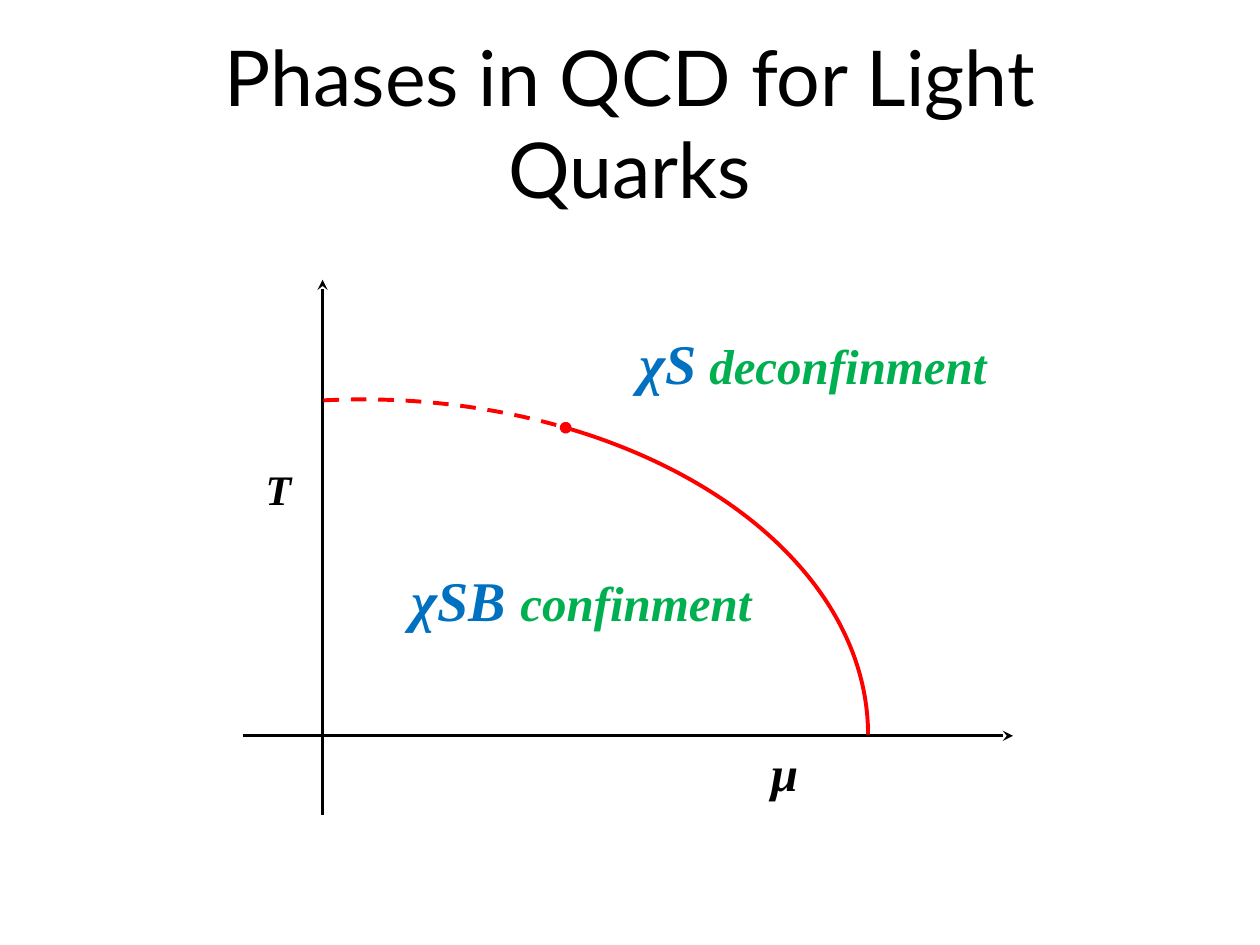
from lxml import etree
from pptx import Presentation
from pptx.dml.color import RGBColor
from pptx.enum.dml import MSO_LINE
from pptx.enum.shapes import MSO_CONNECTOR, MSO_SHAPE
from pptx.enum.text import MSO_ANCHOR, MSO_AUTO_SIZE, PP_ALIGN
from pptx.oxml.ns import qn
from pptx.util import Inches, Pt

BLACK = RGBColor(0x00, 0x00, 0x00)
BLUE = RGBColor(0x00, 0x70, 0xC0)
GREEN = RGBColor(0x00, 0xB0, 0x50)
RED = RGBColor(0xFF, 0x00, 0x00)
TITLE_FONT, LABEL_FONT = "Lato", "Times New Roman"
TITLE = "Phases in QCD for Light Quarks"

# Labels: box (left, top, width, height), runs (text, size, colour)
LABELS = [
    ((2.01, 3.63, 0.41, 0.5), [("T", 24, BLACK)]),
    ((6.02, 5.84, 0.42, 0.57), [("μ", 28, BLACK)]),
    ((3.17, 4.44, 2.93, 0.64), [("χSB ", 32, BLUE), ("confinment", 28, GREEN)]),
    ((4.98, 2.56, 2.98, 1.18),
     [("χS", 32, BLUE), (" ", 28, BLUE), ("deconfinment", 28, GREEN)]),
]

# Axes cross at the origin: (start, end)
ORIGIN_X, ORIGIN_Y = 2.56, 5.84
AXES = [
    ((1.93, ORIGIN_Y), (8.04, ORIGIN_Y)),
    ((ORIGIN_X, 6.47), (ORIGIN_X, 2.22)),
]

# Phase boundary: one ellipse, split at the critical point (angles in degrees)
ELLIPSE = (-1.14, 3.17, 8.03, 5.32)
CRITICAL = 303.55
ARCS = [
    (263.38, CRITICAL, MSO_LINE.DASH, None),
    (CRITICAL, 0, None, "oval"),
]
ADJ_PER_DEGREE = 0.6  # 60000 angle units per degree over 100000


def inches(values):
    return [Inches(v) for v in values]


def add_line_end(line, tag, kind):
    etree.SubElement(line._get_or_add_ln(), qn(tag), type=kind)


prs = Presentation()
prs.slide_width, prs.slide_height = Inches(10), Inches(7.5)
s = prs.slides.add_slide(prs.slide_layouts[5])

# Title
title = s.shapes.title
title.left, title.top, title.width, title.height = inches((0.75, 0.36, 8.5, 1.21))
tf = title.text_frame
tf.text = TITLE
tf.word_wrap = True
tf.auto_size = MSO_AUTO_SIZE.NONE
tf.vertical_anchor = MSO_ANCHOR.MIDDLE
p = tf.paragraphs[0]
p.alignment = PP_ALIGN.CENTER
p.font.name, p.font.size = TITLE_FONT, Pt(44)
p.font.color.rgb = BLACK

# Labels
for box, runs in LABELS:
    tf = s.shapes.add_textbox(*inches(box)).text_frame
    tf.word_wrap = False
    tf.auto_size = MSO_AUTO_SIZE.SHAPE_TO_FIT_TEXT
    p = tf.paragraphs[0]
    p.font.name, p.font.bold, p.font.italic = LABEL_FONT, True, True
    for text, size, color in runs:
        r = p.add_run()
        r.text = text
        r.font.size = Pt(size)
        r.font.color.rgb = color

# Axes
for start, end in AXES:
    axis = s.shapes.add_connector(MSO_CONNECTOR.STRAIGHT, *inches(start + end))
    axis.line.color.rgb = BLACK
    axis.line.width = Pt(1.5)
    add_line_end(axis.line, "a:tailEnd", "stealth")
    etree.SubElement(axis._element.spPr, qn("a:effectLst"))

# Phase boundary
for first, last, dash, head in ARCS:
    sp = s.shapes.add_shape(MSO_SHAPE.ARC, *inches(ELLIPSE))
    sp.adjustments[0] = first * ADJ_PER_DEGREE
    sp.adjustments[1] = last * ADJ_PER_DEGREE
    sp.shadow.inherit = False
    sp.fill.background()
    sp.line.color.rgb = RED
    sp.line.width = Pt(2.25)
    if dash:
        sp.line.dash_style = dash
    if head:
        add_line_end(sp.line, "a:headEnd", head)

prs.save("out.pptx")
